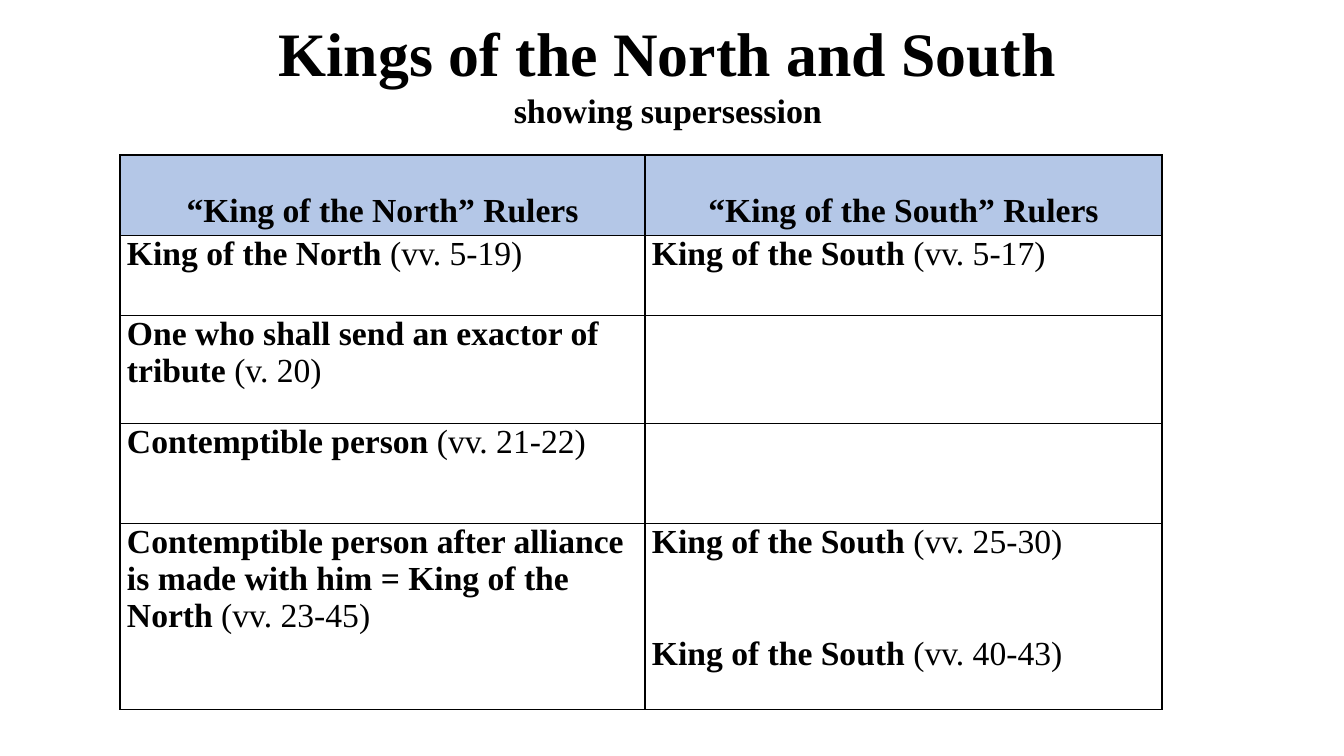
import dataclasses

import pptx
import pptx.dml.color
import pptx.enum.text
import pptx.oxml
import pptx.oxml.ns
import pptx.util

PX = 914400 / 100.8
CENTER = pptx.enum.text.PP_ALIGN.CENTER
LEFT = pptx.enum.text.PP_ALIGN.LEFT


@dataclasses.dataclass(frozen=True)
class Theme:
    font: str = "Times New Roman"
    ink: str = "000000"
    header_fill: str = "B4C7E7"
    title_size: float = 44.1
    subtitle_size: float = 24.3
    table_size: float = 24
    border_width: float = 1


COLUMN_WIDTHS = [525, 517]
ROW_HEIGHTS = [75, 80, 108, 100, 186]
HEADERS = ["“King of the North” Rulers", "“King of the South” Rulers"]
# Each cell lists its (ruler, verses) entries.
RULERS = [
    [[("King of the North", "(vv. 5-19)")], [("King of the South", "(vv. 5-17)")]],
    [[("One who shall send an exactor of tribute", "(v. 20)")], []],
    [[("Contemptible person", "(vv. 21-22)")], []],
    [[("Contemptible person after alliance is made with him = King of the North",
       "(vv. 23-45)")],
     [("King of the South", "(vv. 25-30)"), ("King of the South", "(vv. 40-43)")]],
]


def px(length):
    return pptx.util.Emu(round(length * PX))


def apply(target, values):
    for name, value in values.items():
        setattr(target, name, value)


class SlideBuilder:
    def __init__(self, slide, theme):
        self.slide = slide
        self.theme = theme

    def span(self, para, text, size, bold=True):
        span = para.add_run()
        span.text = text
        apply(span.font, {"name": self.theme.font, "size": pptx.util.Pt(size), "bold": bold})
        span.font.color.rgb = pptx.dml.color.RGBColor.from_string(self.theme.ink)

    def title(self, left, top, width, height, title, subtitle):
        box = self.slide.shapes.add_textbox(px(left), px(top), px(width), px(height))
        apply(box.text_frame, {"word_wrap": True, "margin_top": 0, "margin_bottom": 0})
        para = box.text_frame.paragraphs[0]
        para.alignment = CENTER
        self.span(para, title, self.theme.title_size)
        para.add_line_break()
        self.span(para, subtitle, self.theme.subtitle_size)

    def borders(self, cell):
        properties = cell._tc.get_or_add_tcPr()
        width = pptx.util.Pt(self.theme.border_width)
        for side in ("lnL", "lnR", "lnT", "lnB"):
            properties.append(pptx.oxml.parse_xml(
                f'<a:{side} {pptx.oxml.ns.nsdecls("a")} w="{width}"><a:solidFill>'
                f'<a:srgbClr val="{self.theme.ink}"/></a:solidFill></a:{side}>'))

    def cell(self, cell, fill=None):
        apply(cell, {"margin_left": px(7), "margin_right": px(7),
                     "margin_top": 0, "margin_bottom": 0})
        self.borders(cell)
        if fill:
            cell.fill.solid()
            cell.fill.fore_color.rgb = pptx.dml.color.RGBColor.from_string(fill)
        else:
            cell.fill.background()

    def header(self, cell, text):
        self.cell(cell, self.theme.header_fill)
        para = cell.text_frame.paragraphs[0]
        apply(para, {"alignment": CENTER, "line_spacing": 2.0})
        self.span(para, text, self.theme.table_size)

    def rulers(self, cell, entries):
        self.cell(cell)
        for index, (ruler, verses) in enumerate(entries):
            para = cell.text_frame.add_paragraph() if index else cell.text_frame.paragraphs[0]
            apply(para, {"alignment": LEFT, "space_before": px(75 if index else 0)})
            self.span(para, ruler + " ", self.theme.table_size)
            self.span(para, verses, self.theme.table_size, bold=False)

    def table(self, left, top, widths, heights, headers, rows):
        table = self.slide.shapes.add_table(
            len(heights), len(widths), px(left), px(top),
            px(sum(widths)), px(sum(heights))).table
        apply(table, {"first_row": False, "horz_banding": False})
        for column, width in zip(table.columns, widths):
            column.width = px(width)
        for row, height in zip(table.rows, heights):
            row.height = px(height)
        for column, text in enumerate(headers):
            self.header(table.cell(0, column), text)
        for row, cells in enumerate(rows, 1):
            for column, entries in enumerate(cells):
                self.rulers(table.cell(row, column), entries)


def main():
    deck = pptx.Presentation()
    apply(deck, {"slide_width": px(1344), "slide_height": px(756)})
    page = deck.slides.add_slide(deck.slide_layouts[6])
    builder = SlideBuilder(page, Theme())
    builder.title(88, 15, 1160, 101, "Kings of the North and South", "showing supersession")
    builder.table(120, 155, COLUMN_WIDTHS, ROW_HEIGHTS, HEADERS, RULERS)
    deck.save("out.pptx")


if __name__ == "__main__":
    main()
